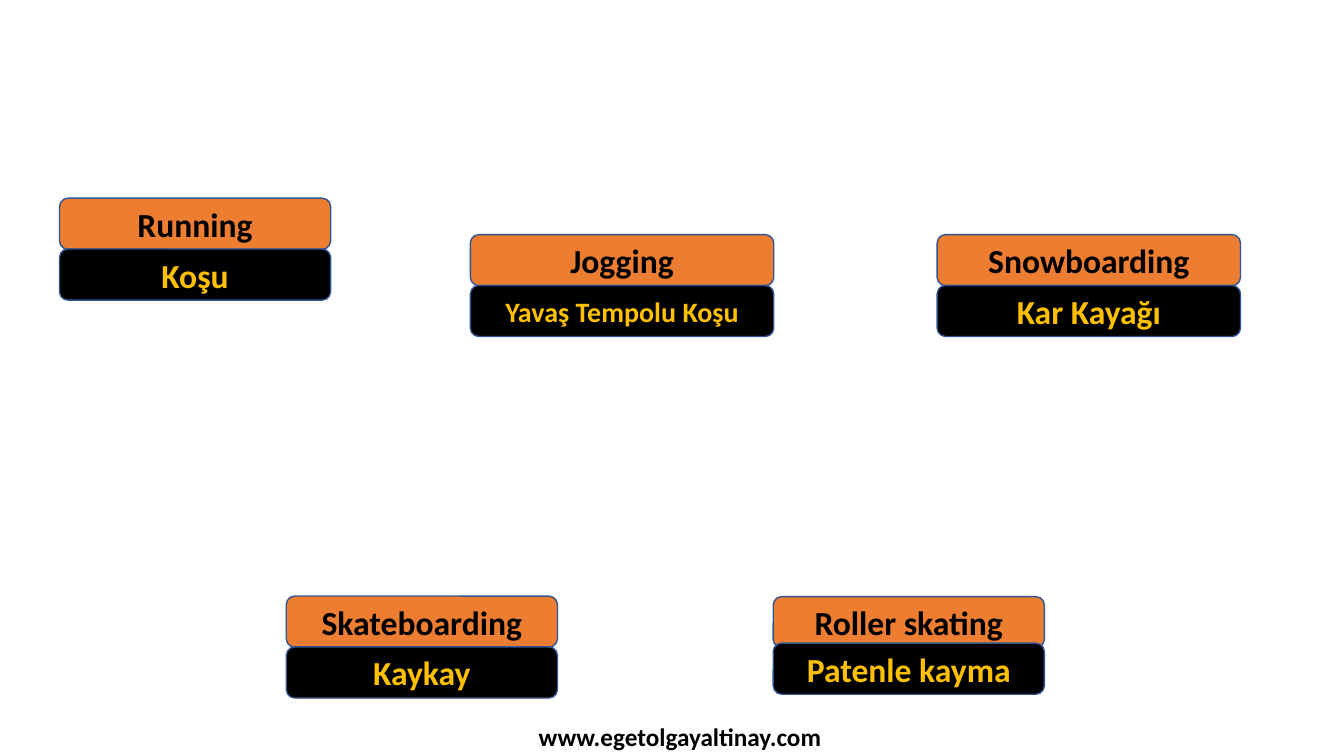
from dataclasses import dataclass

from pptx import Presentation
from pptx import util as u
from pptx.dml import color
from pptx.enum import shapes, text


@dataclass(frozen=True)
class Theme:
    font: str = "Calibri"
    orange: str = "ED7D31"
    black: str = "000000"
    gold: str = "FFC000"
    edge: str = "325491"
    large: int = 24
    small: int = 20
    foot: int = 18


THEME = Theme()
HIGH = 36.5  # height of one label
DROP = 36.3  # step from the English label to the Turkish one
SLIM, WIDE = 193.7, 216.7

# left, top, width, English, Turkish, Turkish type size, step
CARDS = [
    (42.5, 141.6, SLIM, "Running", "Koşu", THEME.large, DROP),
    (336, 167.6, WIDE, "Jogging", "Yavaş Tempolu Koşu", THEME.small, DROP),
    (669.4, 167.6, WIDE, "Snowboarding", "Kar Kayağı", THEME.large, DROP),
    (204.5, 425.8, SLIM, "Skateboarding", "Kaykay", THEME.large, DROP),
    (552.3, 426.2, SLIM, "Roller skating", "Patenle kayma", THEME.large, 33.2),
]


def rgb(code):
    return color.RGBColor.from_string(code)


def write(frame, words, size, ink):
    """Put one bold, centred line in a text frame."""
    frame.word_wrap = True
    line = frame.paragraphs[0]
    line.alignment = text.PP_ALIGN.CENTER
    run = line.add_run()
    run.text = words
    run.font.name = THEME.font
    run.font.size = u.Pt(size)
    run.font.bold = True
    run.font.color.rgb = rgb(ink)


def label(slide, box, words, size, fill, ink):
    shape = slide.shapes.add_shape(
        shapes.MSO_SHAPE.ROUNDED_RECTANGLE, *map(u.Pt, box))
    shape.shadow.inherit = False
    shape.fill.solid()
    shape.fill.fore_color.rgb = rgb(fill)
    shape.line.color.rgb = rgb(THEME.edge)
    shape.line.width = u.Pt(1)
    shape.text_frame.vertical_anchor = text.MSO_ANCHOR.MIDDLE
    write(shape.text_frame, words, size, ink)


def card(slide, left, top, width, english, turkish, size, drop):
    """Stack the English word on its Turkish meaning."""
    label(slide, (left, top, width, HIGH), english, THEME.large,
          THEME.orange, THEME.black)
    label(slide, (left, top + drop, width, HIGH), turkish, size,
          THEME.black, THEME.gold)


def footer(slide, box, words):
    frame = slide.shapes.add_textbox(*map(u.Pt, box)).text_frame
    frame.auto_size = text.MSO_AUTO_SIZE.SHAPE_TO_FIT_TEXT
    write(frame, words, THEME.foot, THEME.black)


def main():
    deck = Presentation()
    deck.slide_width, deck.slide_height = u.Pt(960), u.Pt(540)
    slide = deck.slides.add_slide(deck.slide_layouts[6])
    for entry in CARDS:
        card(slide, *entry)
    footer(slide, (330.5, 512, 310.3, 29), "www.egetolgayaltinay.com")
    deck.save("out.pptx")


if __name__ == "__main__":
    main()
